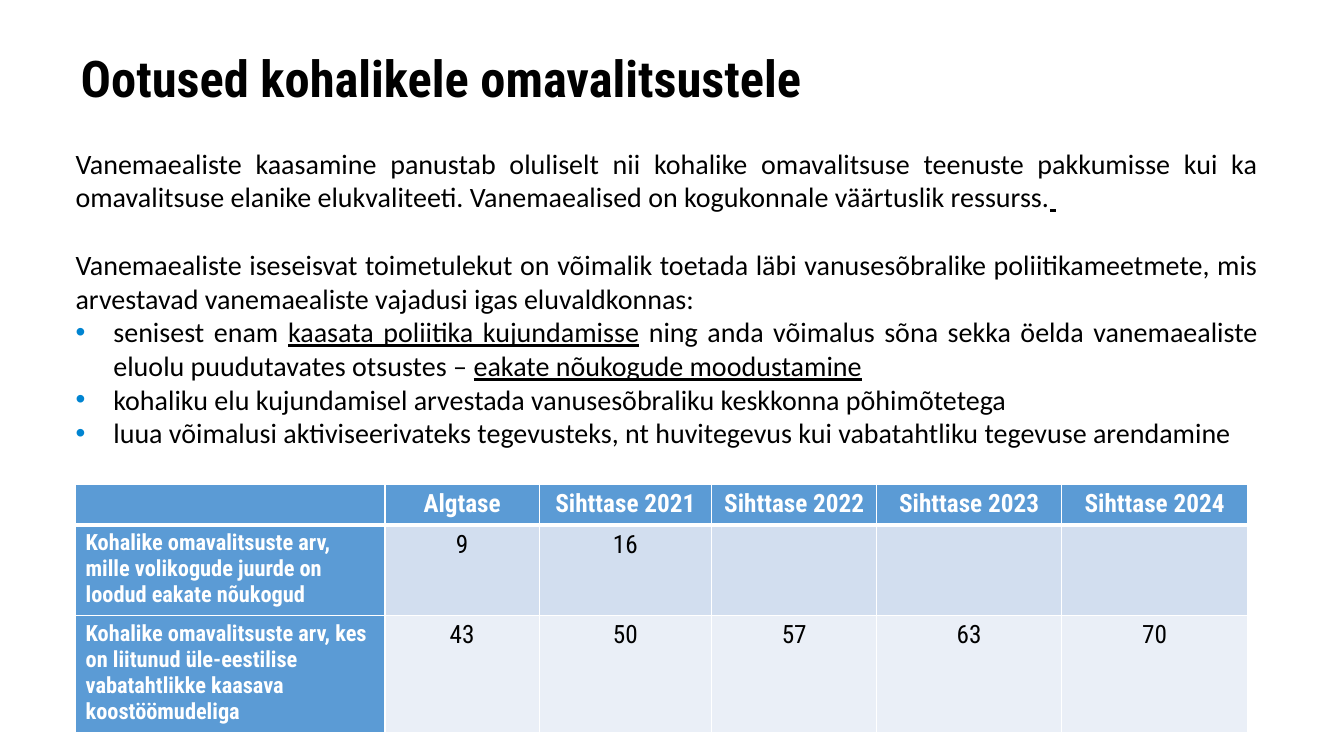
from lxml.etree import SubElement
from pptx import Presentation
from pptx.dml.color import RGBColor
from pptx.enum.text import MSO_ANCHOR as Anchor, PP_ALIGN as Align
from pptx.oxml.ns import qn
from pptx.util import Pt

HEADING_FONT = "Roboto Condensed"
BLUE = "5B9BD5"
TITLE_BOX = (57.6, 34.6, 844.6, 85)
BODY_BOX = (54, 104.4, 844.6, 240)
TABLE_BOX = (54, 346, 837.4, 173)
COLUMNS = [221, 110.2, 123.1, 118.1, 131.8, 133.2]
ROWS = [28.5, 63, 81.5]

PARAGRAPHS = [
    (False, 24.4, [
        ("Vanemaealiste kaasamine panustab oluliselt nii kohalike omavalitsuse teenuste "
         "pakkumisse kui ka omavalitsuse elanike elukvaliteeti. Vanemaealised on "
         "kogukonnale väärtuslik ressurss.", False),
        (" ", True)]),
    (False, 0, [
        ("Vanemaealiste iseseisvat toimetulekut on võimalik toetada läbi vanusesõbralike "
         "poliitikameetmete, mis arvestavad vanemaealiste vajadusi igas eluvaldkonnas:", False)]),
    (True, 0, [
        ("senisest enam ", False),
        ("kaasata poliitika kujundamisse", True),
        (" ning anda võimalus sõna sekka öelda vanemaealiste eluolu puudutavates otsustes – ", False),
        ("eakate nõukogude moodustamine", True)]),
    (True, 0, [
        ("kohaliku elu kujundamisel arvestada vanusesõbraliku keskkonna põhimõtetega", False)]),
    (True, 0, [
        ("luua võimalusi aktiviseerivateks tegevusteks, nt huvitegevus kui vabatahtliku "
         "tegevuse arendamine", False)]),
]

TARGETS = [
    ["", "Algtase"] + [f"Sihttase {year}" for year in range(2021, 2025)],
    ["Kohalike omavalitsuste arv, mille volikogude juurde on loodud eakate nõukogud",
     "9", "16", "", "", ""],
    ["Kohalike omavalitsuste arv, kes on liitunud üle-eestilise vabatahtlikke kaasava "
     "koostöömudeliga", "43", "50", "57", "63", "70"],
]


def color(value):
    return RGBColor.from_string(value)


def apply(target, values):
    for name, value in values.items():
        setattr(target, name, value)


def write(para, text, size, font, ink="000000", **style):
    span = para.add_run()
    span.text = text
    apply(span.font, {"size": Pt(size), "name": font, **style})
    span.font.color.rgb = color(ink)


def frame_format(top=0):
    return {"margin_left": 0, "margin_right": 0, "margin_top": Pt(top),
            "margin_bottom": 0, "word_wrap": True, "vertical_anchor": Anchor.TOP}


def add_bullet(para):
    props = para._p.get_or_add_pPr()
    props.set("marL", str(Pt(27)))
    props.set("indent", str(Pt(-27)))
    tint = SubElement(props, qn("a:buClr"))
    SubElement(tint, qn("a:srgbClr"), val="0084D1")
    SubElement(props, qn("a:buFont"), typeface="Arial")
    SubElement(props, qn("a:buChar"), char="•")


def add_borders(cell, bottom):
    props = cell._tc.get_or_add_tcPr()
    for side, width in {"L": 1, "R": 1, "T": 1, "B": bottom}.items():
        line = SubElement(props, qn(f"a:ln{side}"), w=str(Pt(width)))
        fill = SubElement(line, qn("a:solidFill"))
        SubElement(fill, qn("a:srgbClr"), val="FFFFFF")


def add_title(page, box):
    title = page.shapes.title
    apply(title, dict(zip(("left", "top", "width", "height"), map(Pt, box))))
    apply(title.text_frame, frame_format(4.3))
    para = title.text_frame.paragraphs[0]
    apply(para, {"alignment": Align.LEFT, "line_spacing": 0.88})
    write(para, "Ootused kohalikele omavalitsustele", 36.1, HEADING_FONT, bold=True)


def add_body(page, box):
    frame = page.shapes.add_textbox(*map(Pt, box)).text_frame
    apply(frame, frame_format())
    for index, (bulleted, gap, spans) in enumerate(PARAGRAPHS):
        para = frame.add_paragraph() if index else frame.paragraphs[0]
        apply(para, {"alignment": Align.JUSTIFY, "space_after": Pt(gap)})
        if bulleted:
            add_bullet(para)
        for text, underlined in spans:
            write(para, text, 20, "Calibri", underline=underlined)


def add_targets(page, box):
    table = page.shapes.add_table(len(ROWS), len(COLUMNS), *map(Pt, box)).table
    for column, width in zip(table.columns, COLUMNS):
        column.width = Pt(width)
    for row, height in zip(table.rows, ROWS):
        row.height = Pt(height)
    for row, texts in enumerate(TARGETS):
        for column, text in enumerate(texts):
            cell = table.cell(row, column)
            heading = row == 0 or column == 0
            add_borders(cell, 3 if row == 0 else 1)
            cell.fill.solid()
            cell.fill.fore_color.rgb = color(BLUE if heading else ("D2DEEF", "EAEFF7")[row - 1])
            para = cell.text_frame.paragraphs[0]
            para.alignment = Align.CENTER if column else Align.LEFT
            if text:
                write(para, text, 18 if column else 16, HEADING_FONT,
                      "FFFFFF" if heading else "000000", bold=heading)


def main():
    deck = Presentation()
    apply(deck, {"slide_width": Pt(960), "slide_height": Pt(540)})
    page = deck.slides.add_slide(deck.slide_layouts[5])
    add_title(page, TITLE_BOX)
    add_body(page, BODY_BOX)
    add_targets(page, TABLE_BOX)
    deck.save("out.pptx")


if __name__ == "__main__":
    main()
